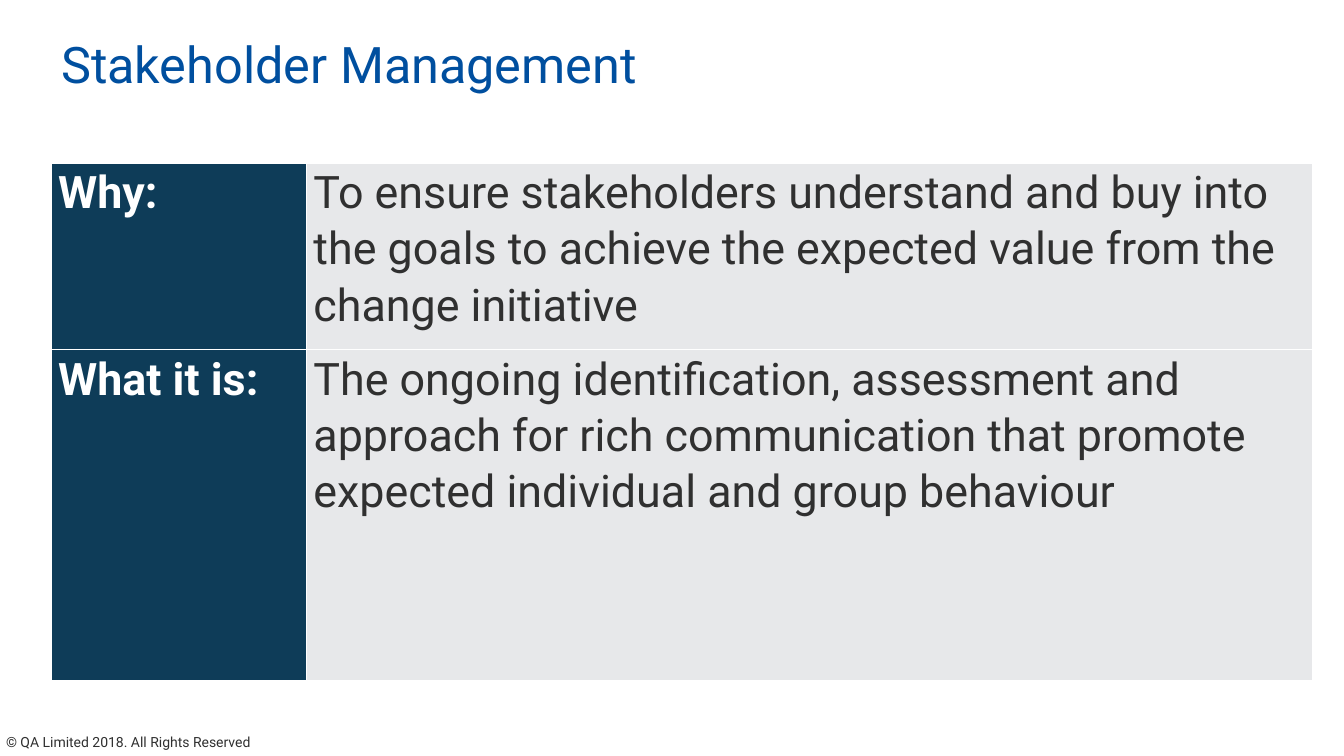
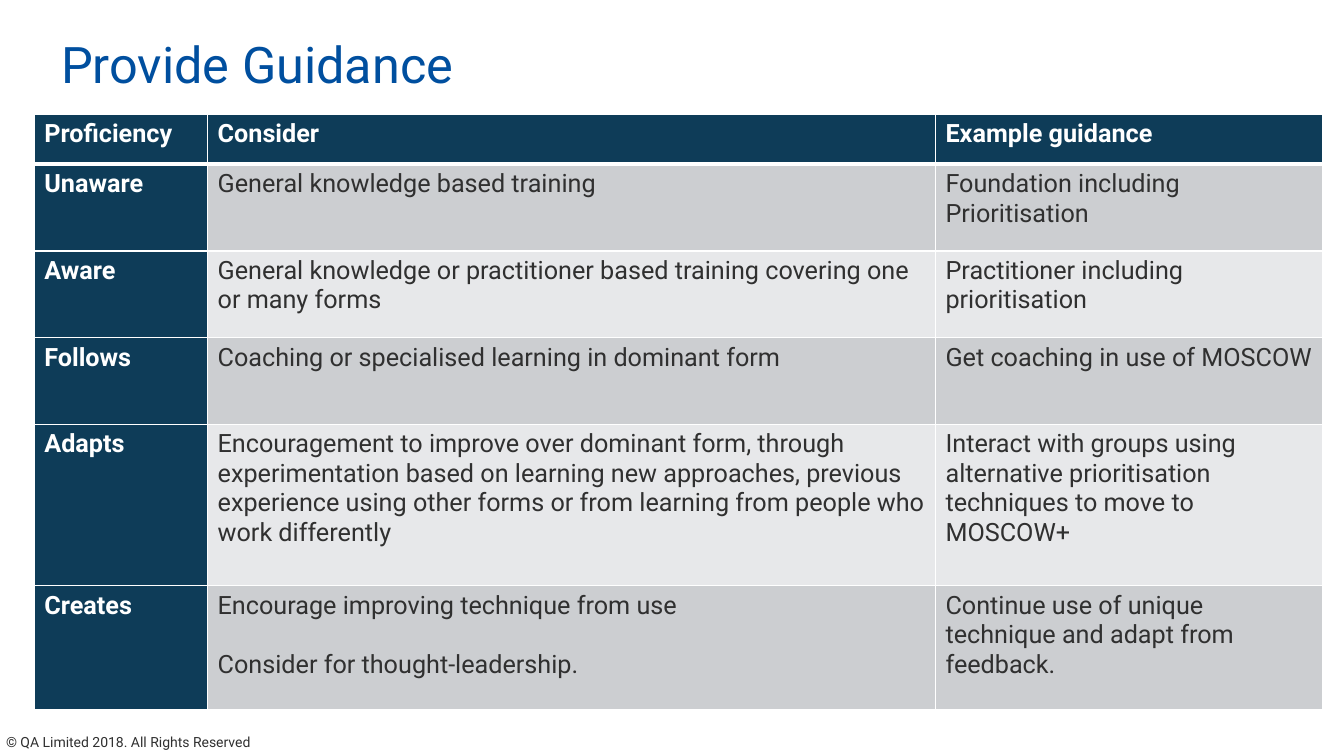
from lxml.etree import SubElement
from pptx import Presentation
from pptx.dml.color import RGBColor
from pptx.enum.text import MSO_ANCHOR, MSO_AUTO_SIZE, PP_ALIGN
from pptx.oxml.ns import qn
from pptx.util import Inches, Pt

FONT = "Roboto"
BLUE, NAVY, INK, WHITE = "004F9F", "0E3C58", "303030", "FFFFFF"
LIGHT, GREY = "E7E8EA", "CCCED1"
WIDTH, HEIGHT = Inches(13.33), Inches(7.5)


def shares(whole, percents):
    return [round(whole * percent / 100) for percent in percents]


def style(para, size, color, bold=False, **spacing):
    for name, value in {"name": FONT, "size": Pt(size), "bold": bold}.items():
        setattr(para.font, name, value)
    para.font.color.rgb = RGBColor.from_string(color)
    for name, value in spacing.items():
        setattr(para, name, value)


# Tables: place, columns and rows are percentages of the slide
pages = [
    {
        "title": "Stakeholder Management",
        "place": (3.8, 21.6), "columns": [19, 74.87], "rows": [24.67, 43.73],
        "size": 32, "header_rows": 0, "bands": [LIGHT],
        "spacing": {"line_spacing": 1.07}, "margins": (0.07, 0),
        "cells": [
            ["Why:", "To ensure stakeholders understand and buy into the goals to "
             "achieve the expected value from the change initiative"],
            ["What it is:", "The ongoing identification, assessment and approach for rich "
             "communication that promote expected individual and group behaviour"],
        ],
    },
    {
        "title": "Provide Guidance",
        "place": (2.55, 15.07), "columns": [12.9, 54.16, 28.8],
        "rows": [6.67] + [11.47] * 3 + [21.33, 16.4],
        "size": 18, "header_rows": 1, "bands": [LIGHT, GREY],
        "spacing": {}, "margins": (0.1, 0.05),
        "cells": [
            ["Proficiency", "Consider", "Example guidance"],
            ["Unaware", "General knowledge based training",
             "Foundation including Prioritisation"],
            ["Aware", "General knowledge or practitioner based training covering one "
             "or many forms", "Practitioner including prioritisation"],
            ["Follows", "Coaching or specialised learning in dominant form",
             "Get coaching in use of MOSCOW"],
            ["Adapts", "Encouragement to improve over dominant form, through "
             "experimentation based on learning new approaches, previous experience "
             "using other forms or from learning from people who work differently",
             "Interact with groups using alternative prioritisation techniques to "
             "move to MOSCOW+"],
            ["Creates", "Encourage improving technique from use\n"
             "Consider for thought-leadership.",
             "Continue use of unique technique and adapt from feedback."],
        ],
    },
]

deck = Presentation()
deck.slide_width, deck.slide_height = WIDTH, HEIGHT
layout = deck.slide_layouts.get_by_name("Title Only")

# Shared title place
title = layout.placeholders[0]
title.left, title.width = shares(WIDTH, (3.8, 91.4))
title.top, title.height = shares(HEIGHT, (4.4, 9.1))

for number, content in enumerate(pages):
    page = deck.slides.add_slide(layout)

    # Shared footer, moved once to the layout
    if number == 0:
        footer_top, footer_height = shares(HEIGHT, (96.4, 3.6))
        footer = page.shapes.add_textbox(0, footer_top, Inches(3.15), footer_height)
        footer.text_frame.margin_left = Inches(0.06)
        footer.text_frame.text = "© QA Limited 2018. All Rights Reserved"
        style(footer.text_frame.paragraphs[0], 10, INK)
        layout.shapes._spTree.append(footer._element)

    # Title
    frame = page.shapes.title.text_frame
    frame.text = content["title"]
    frame.auto_size = MSO_AUTO_SIZE.NONE
    frame.vertical_anchor = MSO_ANCHOR.MIDDLE
    style(frame.paragraphs[0], 36, BLUE, alignment=PP_ALIGN.LEFT, line_spacing=0.9)

    # Table grid
    widths = shares(WIDTH, content["columns"])
    heights = shares(HEIGHT, content["rows"])
    [left], [top] = shares(WIDTH, content["place"][:1]), shares(HEIGHT, content["place"][1:])
    table = page.shapes.add_table(len(heights), len(widths), left, top,
                                  sum(widths), sum(heights)).table
    table.first_row = content["header_rows"] > 0
    table.first_col, table.horz_banding = True, False
    for column, width in zip(table.columns, widths):
        column.width = width
    for row, height in zip(table.rows, heights):
        row.height = height

    # Cells
    side, edge = (Inches(margin) for margin in content["margins"])
    header_rows, bands = content["header_rows"], content["bands"]
    for r, texts in enumerate(content["cells"]):
        for c, text in enumerate(texts):
            cell = table.cell(r, c)
            heading = r < header_rows or c == 0
            cell.text = text
            cell.margin_left = cell.margin_right = side
            cell.margin_top = cell.margin_bottom = edge
            for index, para in enumerate(cell.text_frame.paragraphs):
                style(para, content["size"], WHITE if heading else INK, heading,
                      **content["spacing"])
                if index:
                    para.space_before = Pt(21)

            # White borders, thicker under the header
            properties = cell._tc.get_or_add_tcPr()
            for tag in ("a:lnL", "a:lnR", "a:lnT", "a:lnB"):
                under_header = (tag == "a:lnB" and r == header_rows - 1
                                or tag == "a:lnT" and r == header_rows > 0)
                line = SubElement(properties, qn(tag), w=str(Pt(3 if under_header else 1)))
                SubElement(SubElement(line, qn("a:solidFill")), qn("a:srgbClr"), val=WHITE)
            cell.fill.solid()
            cell.fill.fore_color.rgb = RGBColor.from_string(
                NAVY if heading else bands[r % len(bands)])

deck.save("out.pptx")
